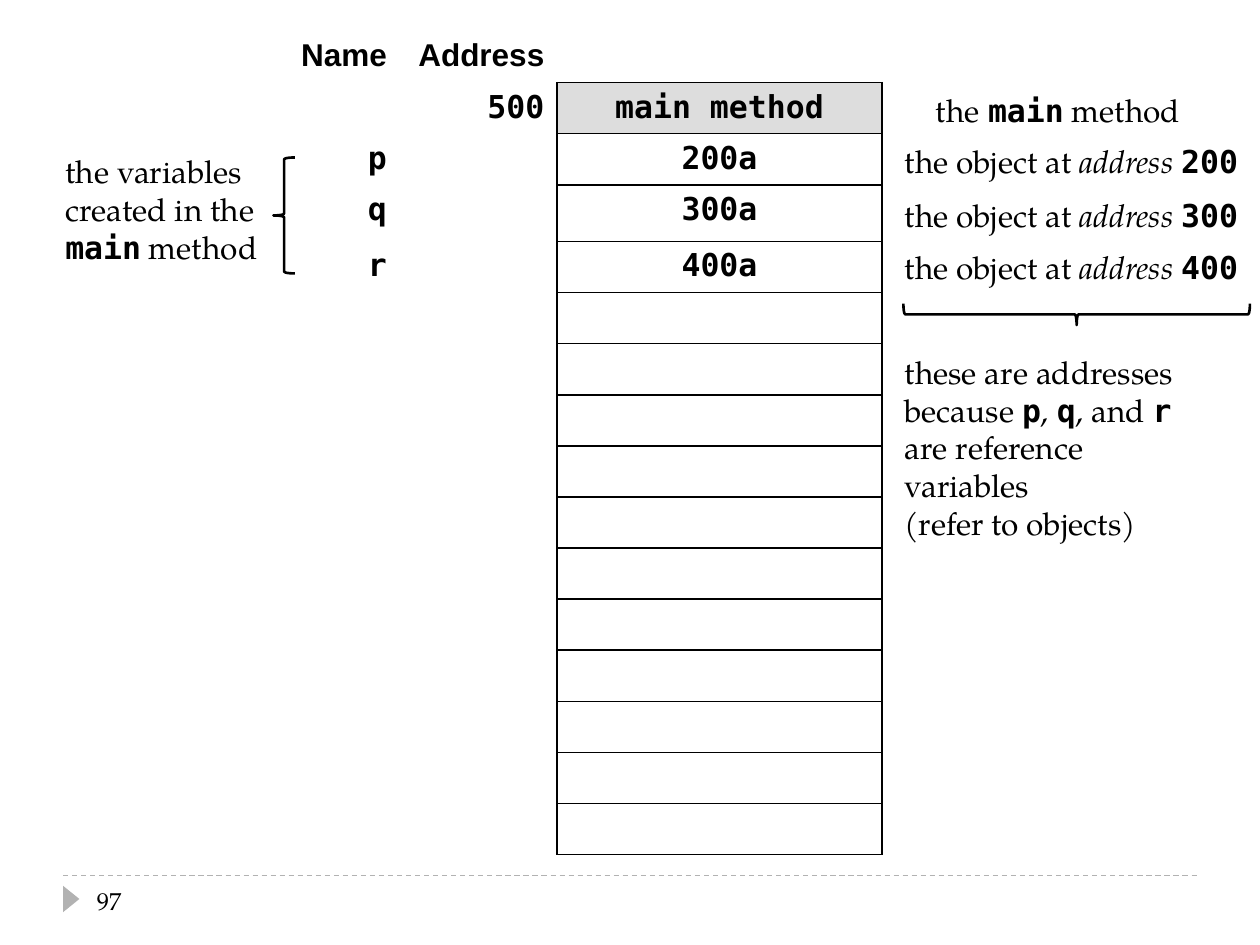
from dataclasses import dataclass

from lxml import etree
from pptx import Presentation
from pptx.dml.color import RGBColor
from pptx.enum.dml import MSO_LINE
from pptx.enum.shapes import MSO_CONNECTOR, MSO_SHAPE
from pptx.enum.text import MSO_ANCHOR, PP_ALIGN
from pptx.oxml.ns import qn
from pptx.util import Inches, Pt

BLACK = RGBColor(0x00, 0x00, 0x00)
WHITE = RGBColor(0xFF, 0xFF, 0xFF)
GRAY = RGBColor(0xB2, 0xB2, 0xB2)
SHADE = RGBColor(0xDD, 0xDD, 0xDD)
SERIF, MONO, SANS = "TeX Gyre Pagella", "DejaVu Sans Mono", "Arial"
RIGHT, CENTER = PP_ALIGN.RIGHT, PP_ALIGN.CENTER
MIDDLE = MSO_ANCHOR.MIDDLE
STRAIGHT, DASH = MSO_CONNECTOR.STRAIGHT, MSO_LINE.DASH
BRACE, TRIANGLE = MSO_SHAPE.LEFT_BRACE, MSO_SHAPE.ISOSCELES_TRIANGLE

COLUMNS = (1, 1.25, 2.58)
ROW_COUNT, ROW_HEIGHT = 16, 0.405
TALL_ROW, TALL_HEIGHT = 3, 0.45
MEMORY = [
    ("Name", "Address", ""),
    ("", "500", "main method"),
    ("p", "", "200a"),
    ("q", "", "300a"),
    ("r", "", "400a"),
]


@dataclass
class Span:
    text: str
    code: bool = False
    italic: bool = False


@dataclass
class Note:
    left: float
    top: float
    width: float
    height: float
    lines: list[list[Span]]
    wrap: bool = False
    size: int = 18


@dataclass
class Brace:
    left: float
    top: float
    width: float
    height: float
    rotation: int = 0


def code(text: str) -> Span:
    return Span(text, code=True)


def address_note(top: float, address: str) -> Note:
    line = [Span("the object at "), Span("address ", italic=True), code(address)]
    return Note(7.08, top, 2.93, 0.4, [line])


NOTES = [
    Note(0.67, 6.95, 2.17, 0.4, [[Span("97")]], size=14),
    Note(7.33, 0.67, 2.19, 0.4, [[Span("the "), code("main"), Span(" method")]]),
    Note(0.42, 1.16, 1.8, 1.01, [
        [Span("the variables")],
        [Span("created in the")],
        [code("main"), Span(" method")],
    ]),
    address_note(1.08, "200"),
    address_note(1.51, "300"),
    address_note(1.92, "400"),
    Note(7.08, 2.75, 2.61, 1.31, [
        [Span("these are addresses")],
        [Span("because "), code("p"), Span(", "), code("q"), Span(", and "), code("r")],
        [Span("are reference variables")],
        [Span("(refer to objects)")],
    ], wrap=True),
]
BRACES = [Brace(2.17, 1.25, 0.17, 0.92), Brace(8.46, 1.12, 0.17, 2.75, 270)]


def style(r, font: str, size: int, bold: bool = False, italic: bool = False) -> None:
    r.font.name, r.font.size = font, Pt(size)
    r.font.bold, r.font.italic = bold, italic
    r.font.color.rgb = BLACK


def add_note(s, note: Note) -> None:
    box = s.shapes.add_textbox(Inches(note.left), Inches(note.top),
                               Inches(note.width), Inches(note.height))
    tf = box.text_frame
    tf.word_wrap = note.wrap
    if note.size < 18:
        tf.vertical_anchor = MIDDLE
    for i, line in enumerate(note.lines):
        p = tf.paragraphs[0] if i == 0 else tf.add_paragraph()
        for span in line:
            r = p.add_run()
            r.text = span.text
            style(r, MONO if span.code else SERIF, note.size, span.code, span.italic)


def add_brace(s, brace: Brace) -> None:
    sp = s.shapes.add_shape(BRACE, Inches(brace.left), Inches(brace.top),
                            Inches(brace.width), Inches(brace.height))
    sp.rotation = brace.rotation
    sp.shadow.inherit = False
    sp.fill.background()
    sp.line.color.rgb = BLACK
    sp.line.width = Pt(1.5)


def set_borders(cell, colors: dict[str, RGBColor]) -> None:
    tc_pr = cell._tc.get_or_add_tcPr()
    for i, side in enumerate("LRTB"):
        ln = etree.Element(qn(f"a:ln{side}"), w=str(Pt(1)))
        fill = etree.SubElement(ln, qn("a:solidFill"))
        etree.SubElement(fill, qn("a:srgbClr"), val=str(colors[side]))
        tc_pr.insert(i, ln)


def fill_cell(cell, row: int, col: int, text: str) -> None:
    in_memory = col == 2 and row > 0
    cell.fill.solid()
    cell.fill.fore_color.rgb = SHADE if in_memory and row == 1 else WHITE
    colors = dict.fromkeys("LRTB", BLACK if in_memory else WHITE)
    if col == 1 and row > 0:
        colors["R"] = BLACK
    if col == 2:
        colors["B"] = BLACK
    set_borders(cell, colors)
    if text:
        cell.text_frame.text = text
        p = cell.text_frame.paragraphs[0]
        p.alignment = CENTER if col == 2 else RIGHT
        style(p.runs[0], SANS if row == 0 else MONO, 18, bold=True)


def add_memory_table(s) -> None:
    height = ROW_HEIGHT * (ROW_COUNT - 1) + TALL_HEIGHT
    frame = s.shapes.add_table(ROW_COUNT, len(COLUMNS), Inches(2.17), Inches(0.25),
                               Inches(sum(COLUMNS)), Inches(height))
    table = frame.table
    table.first_row = table.horz_banding = False
    for col, width in enumerate(COLUMNS):
        table.columns[col].width = Inches(width)
    for row in range(ROW_COUNT):
        table.rows[row].height = Inches(TALL_HEIGHT if row == TALL_ROW else ROW_HEIGHT)
        texts = MEMORY[row] if row < len(MEMORY) else ("",) * len(COLUMNS)
        for col, text in enumerate(texts):
            fill_cell(table.cell(row, col), row, col, text)


def add_footer(s) -> None:
    rule = s.shapes.add_connector(STRAIGHT, Inches(0.5), Inches(6.95),
                                  Inches(9.5), Inches(6.95))
    rule.line.color.rgb = GRAY
    rule.line.width = Pt(0.75)
    rule.line.dash_style = DASH
    etree.SubElement(rule._element.spPr, qn("a:effectLst"))
    marker = s.shapes.add_shape(TRIANGLE, Inches(0.46), Inches(7.07),
                                Inches(0.21), Inches(0.13))
    marker.rotation = 90
    marker.shadow.inherit = False
    marker.fill.solid()
    marker.fill.fore_color.rgb = GRAY
    marker.line.fill.background()


def main() -> None:
    prs = Presentation()
    prs.slide_width, prs.slide_height = Inches(10), Inches(7.5)
    s = prs.slides.add_slide(prs.slide_layouts[6])
    add_footer(s)
    add_memory_table(s)
    # Explanations beside the table
    for note in NOTES:
        add_note(s, note)
    for brace in BRACES:
        add_brace(s, brace)
    prs.save("out.pptx")


if __name__ == "__main__":
    main()
